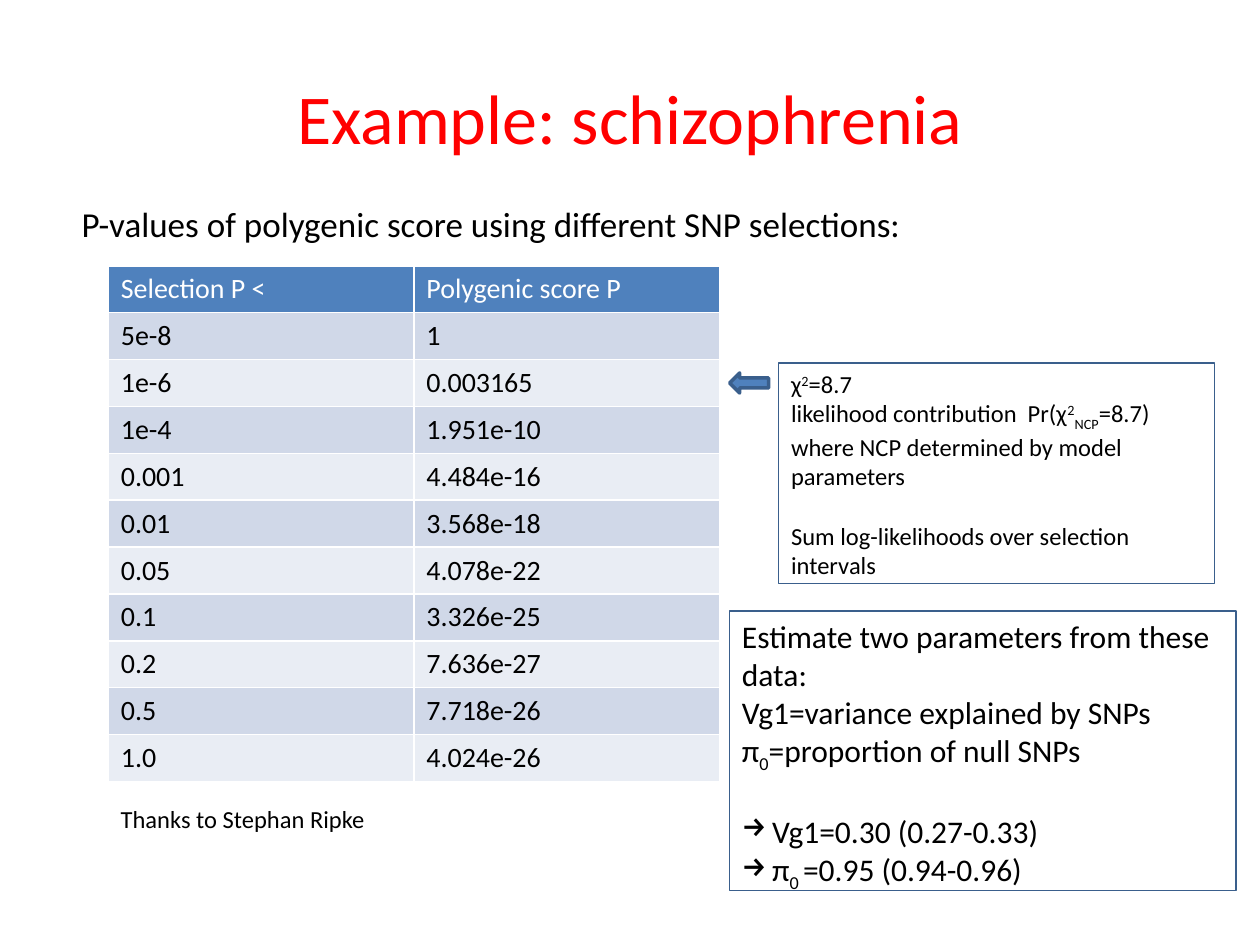
from dataclasses import dataclass

from lxml.etree import SubElement
from pptx import Presentation
from pptx.dml.color import RGBColor as Color
from pptx.enum.shapes import MSO_SHAPE as Preset
from pptx.enum.text import MSO_ANCHOR as Anchor, PP_ALIGN as Align
from pptx.oxml.ns import qn
from pptx.util import Inches, Pt


@dataclass(frozen=True)
class Theme:
    font: str = "Calibri"
    black: str = "000000"
    white: str = "FFFFFF"
    red: str = "FF0000"
    blue: str = "4F81BD"
    outline: str = "3A5F8C"
    bands: tuple = ("D0D8E8", "E9EDF4")
    title: int = 40
    lead: int = 20
    estimate: int = 18
    cell: int = 16
    note: int = 14


@dataclass(frozen=True)
class Span:
    text: str
    baseline: int = 0


@dataclass(frozen=True)
class Para:
    spans: tuple
    before: int = 0
    bullet: str = ""


@dataclass(frozen=True)
class Box:
    left: float
    top: float
    width: float
    height: float
    size: int
    paras: tuple
    framed: bool = False

    def place(self) -> tuple:
        return tuple(map(Inches, (self.left, self.top, self.width, self.height)))


THEME = Theme()


def sub(text: str) -> Span:
    return Span(text, -25000)


def sup(text: str) -> Span:
    return Span(text, 30000)


def plain(text: str, **layout) -> Para:
    return Para((Span(text),), **layout)


TITLE = Box(0.5, 0.3, 9, 1.25, THEME.title, (plain("Example: schizophrenia"),))
BOXES = (
    Box(0.55, 1.56, 8.63, 0.44, THEME.lead, (
        plain("P-values of polygenic score using different SNP selections:"),
    )),
    Box(0.86, 6.33, 3.13, 0.34, THEME.note, (plain("Thanks to Stephan Ripke"),)),
    Box(5.79, 4.85, 4.02, 2.22, THEME.estimate, (
        plain("Estimate two parameters from these data:"),
        plain("Vg1=variance explained by SNPs"),
        Para((Span("π"), sub("0"), Span("=proportion of null SNPs"))),
        plain("Vg1=0.30 (0.27-0.33)", before=22, bullet="→"),
        Para((Span("π"), sub("0 "), Span("=0.95 (0.94-0.96)")), bullet="→"),
    ), framed=True),
    Box(6.18, 2.88, 3.46, 1.75, THEME.note, (
        Para((Span("χ"), sup("2"), Span("=8.7"))),
        Para((Span("likelihood contribution  Pr(χ"), sup("2"), sub("NCP"),
              Span("=8.7) where NCP determined by model parameters"))),
        plain("Sum log-likelihoods over selection intervals", before=17),
    ), framed=True),
)
SCORES = (
    ("Selection P <", "Polygenic score P"),
    ("5e-8", "1"),
    ("1e-6", "0.003165"),
    ("1e-4", "1.951e-10"),
    ("0.001", "4.484e-16"),
    ("0.01", "3.568e-18"),
    ("0.05", "4.078e-22"),
    ("0.1", "3.326e-25"),
    ("0.2", "7.636e-27"),
    ("0.5", "7.718e-26"),
    ("1.0", "4.024e-26"),
)


def apply(target, formats: dict) -> None:
    for name, value in formats.items():
        setattr(target, name, value)


def paint(fill, color: str) -> None:
    fill.solid()
    fill.fore_color.rgb = Color.from_string(color)


def write(frame, paras: tuple, size: int, color: str, align=Align.LEFT) -> None:
    for index, content in enumerate(paras):
        para = frame.add_paragraph() if index else frame.paragraphs[0]
        apply(para, {"alignment": align, "space_before": Pt(content.before)})
        if content.bullet:
            props = para._p.get_or_add_pPr()
            props.set("marL", str(Inches(0.24)))
            props.set("indent", str(-Inches(0.24)))
            SubElement(props, qn("a:buChar"), char=content.bullet)
        for piece in content.spans:
            span = para.add_run()
            span.text = piece.text
            apply(span.font, {"name": THEME.font, "size": Pt(size), "bold": False})
            span.font.color.rgb = Color.from_string(color)
            if piece.baseline:
                span._r.get_or_add_rPr().set("baseline", str(piece.baseline))


def outline(shape, width: float) -> None:
    shape.shadow.inherit = False
    shape.line.color.rgb = Color.from_string(THEME.outline)
    shape.line.width = Pt(width)


def add_title(page, box: Box) -> None:
    title = page.shapes.title
    apply(title, dict(zip(("left", "top", "width", "height"), box.place())))
    title.text_frame.vertical_anchor = Anchor.MIDDLE
    write(title.text_frame, box.paras, box.size, THEME.red, Align.CENTER)


def add_box(page, box: Box) -> None:
    if box.framed:
        shape = page.shapes.add_shape(Preset.RECTANGLE, *box.place())
        shape.fill.background()
        outline(shape, 0.75)
    else:
        shape = page.shapes.add_textbox(*box.place())
    apply(shape.text_frame, {"word_wrap": True, "vertical_anchor": Anchor.TOP})
    write(shape.text_frame, box.paras, box.size, THEME.black)


def add_scores(page) -> None:
    place = map(Inches, (0.86, 2.11, 4.85, 4.03))
    table = page.shapes.add_table(len(SCORES), len(SCORES[0]), *place).table
    for row, values in enumerate(SCORES):
        fill = THEME.bands[(row - 1) % 2] if row else THEME.blue
        color = THEME.black if row else THEME.white
        for column, value in enumerate(values):
            cell = table.cell(row, column)
            paint(cell.fill, fill)
            write(cell.text_frame, (plain(value),), THEME.cell, color)


def add_arrow(page) -> None:
    place = map(Inches, (5.79, 2.96, 0.31, 0.16))
    arrow = page.shapes.add_shape(Preset.LEFT_ARROW, *place)
    paint(arrow.fill, THEME.blue)
    outline(arrow, 2)


def main() -> None:
    deck = Presentation()
    apply(deck, {"slide_width": Inches(10), "slide_height": Inches(7.5)})
    page = deck.slides.add_slide(deck.slide_layouts.get_by_name("Title Only"))
    add_title(page, TITLE)
    add_scores(page)
    for box in BOXES:
        add_box(page, box)
    add_arrow(page)
    deck.save("out.pptx")


if __name__ == "__main__":
    main()
